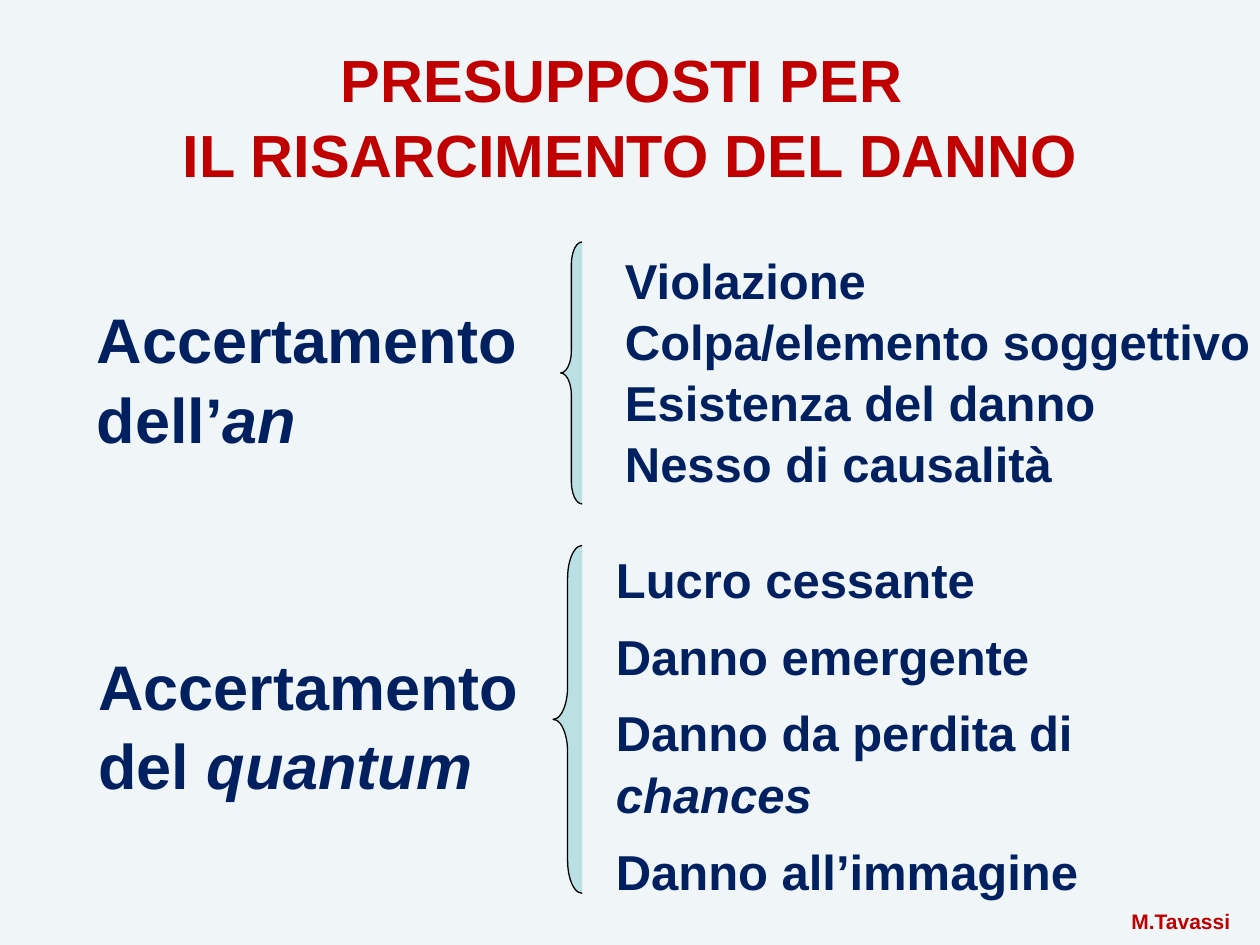
from lxml import etree
from pptx import Presentation
from pptx.dml.color import RGBColor
from pptx.enum import shapes, text
from pptx.oxml import ns
from pptx.util import Inches, Pt

RED = RGBColor(0xC0, 0x00, 0x00)
NAVY = RGBColor(0x00, 0x20, 0x60)
TEAL = RGBColor(0xBB, 0xE0, 0xE3)
BLACK = RGBColor(0x00, 0x00, 0x00)
PALE = RGBColor(0xF0, 0xF6, 0xF8)

deck = Presentation()
deck.slide_width, deck.slide_height = Inches(10), Inches(7.5)
slide = deck.slides.add_slide(deck.slide_layouts[6])
slide.background.fill.solid()
slide.background.fill.fore_color.rgb = PALE


def add_text(place, lines, size, color, pitch=1.0, gap=0, inset=0.1):
    box = slide.shapes.add_textbox(*map(Inches, place))
    frame = box.text_frame
    frame.word_wrap = True
    frame.margin_left = Inches(inset)
    for i, line in enumerate(lines):
        para = frame.paragraphs[0] if i == 0 else frame.add_paragraph()
        para.line_spacing = pitch
        para.space_before = Pt(gap if i else 0)
        for j, part in enumerate(line.split("*")):
            if part:
                run = para.add_run()
                run.text = part
                run.font.name = "Arial"
                run.font.size = Pt(size)
                run.font.bold = True
                run.font.italic = j % 2 == 1
                run.font.color.rgb = color
    return frame


title = add_text((0.75, 0.28, 8.5, 1.25),
                 ["PRESUPPOSTI PER ", "IL RISARCIMENTO DEL DANNO"], 34, RED, 1.06)
title.vertical_anchor = text.MSO_ANCHOR.MIDDLE
for para in title.paragraphs:
    para.alignment = text.PP_ALIGN.CENTER
    props = para.runs[0].font.fill._xPr
    glow = etree.Element(ns.qn("a:effectLst"))
    shade = etree.SubElement(glow, ns.qn("a:outerShdw"),
                             dist="38100", dir="2700000", algn="tl")
    etree.SubElement(shade, ns.qn("a:srgbClr"), val="808080")
    props.find(ns.qn("a:solidFill")).addnext(glow)

add_text((0.67, 2.31, 3.58, 1.3), ["Accertamento dell’*an*"], 36, NAVY, 1.05)
add_text((4.75, 1.92, 5.31, 1.99),
         ["Violazione", "Colpa/elemento soggettivo", "Esistenza del danno",
          "Nesso di causalità"], 28, NAVY, 1.04, inset=0.21)
add_text((0.68, 5.06, 3.75, 1.3), ["Accertamento", "del *quantum*"], 36, NAVY, 1.05)
add_text((4.79, 4.29, 5.24, 2.88),
         ["Lucro cessante", "Danno emergente", "Danno da perdita di *chances*",
          "Danno all’immagine"], 28, NAVY, 1.04, gap=9)
credit = add_text((8.84, 7.16, 1.04, 0.3), ["M.Tavassi"], 12, RED, inset=0.14)
credit.word_wrap = False

for place, curve in [((4.45, 1.92, 0.17, 2.08), 1.04),
                     ((4.39, 4.33, 0.23, 2.76), 1.13)]:
    brace = slide.shapes.add_shape(shapes.MSO_SHAPE.LEFT_BRACE, *map(Inches, place))
    brace.adjustments[0] = curve
    brace.adjustments[1] = 0.5
    brace.shadow.inherit = False
    brace.fill.solid()
    brace.fill.fore_color.rgb = TEAL
    brace.line.color.rgb = BLACK
    brace.line.width = Pt(0.75)

deck.save("out.pptx")
